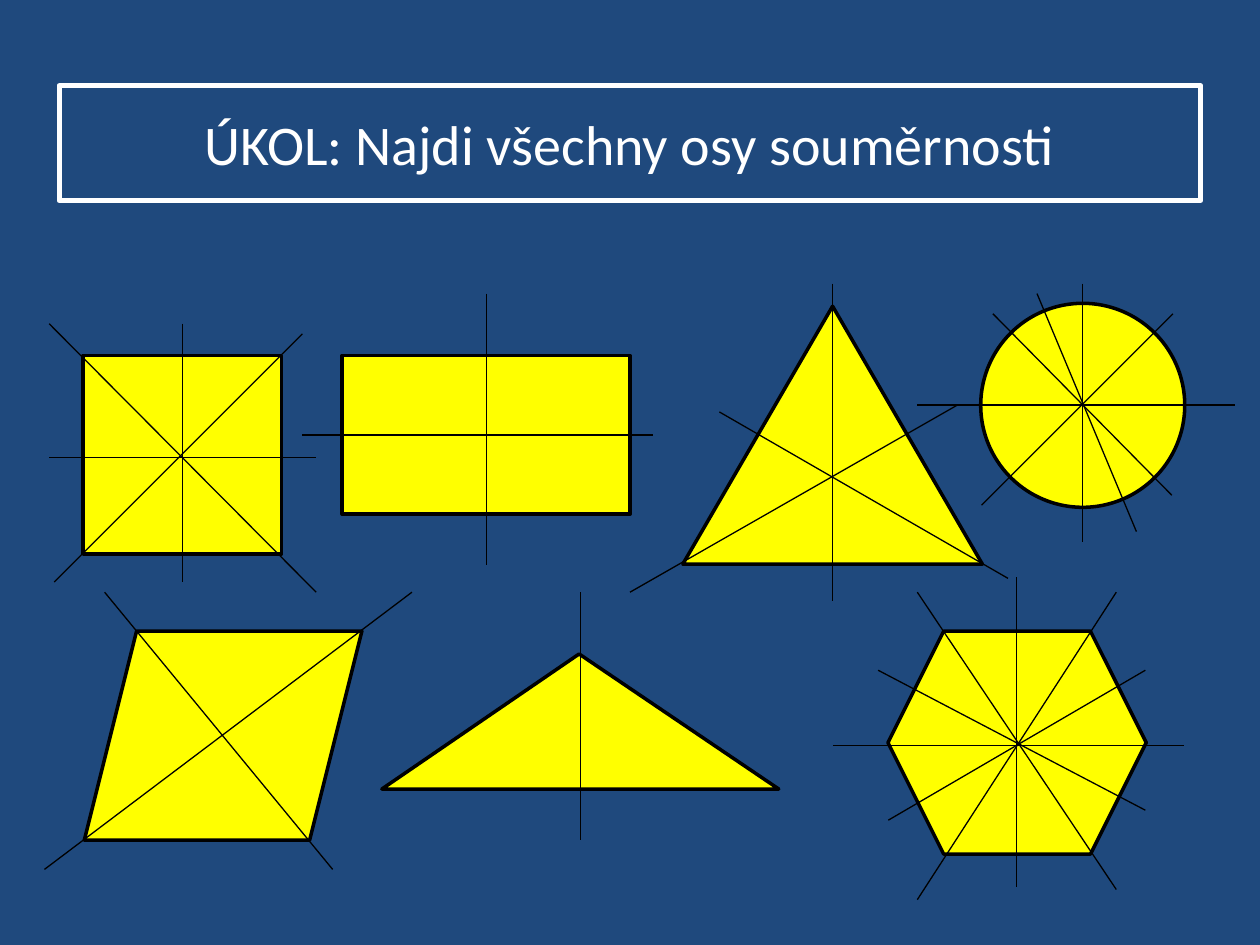
"""Build a slide of plane figures with their axes of symmetry."""
from lxml.etree import SubElement
from pptx import Presentation
from pptx.dml.color import RGBColor
from pptx.enum.shapes import MSO_CONNECTOR, MSO_SHAPE
from pptx.enum.text import MSO_ANCHOR, PP_ALIGN
from pptx.oxml.ns import qn
from pptx.util import Pt

HUES = {"back": "1F497D", "fill": "FFFF00", "ink": "000000", "text": "FFFFFF"}
FONT = "Calibri"
TITLE = "ÚKOL: Najdi všechny osy souměrnosti"
TITLE_BOX = (33.8, 49, 652.3, 65.5)

# kind, box (left, top, width, height), axes (x1, y1, x2, y2)
FIGURES = [
    (MSO_SHAPE.RECTANGLE, (47.4, 203.2, 113.4, 113.4), [
        (28.1, 185, 180.7, 338.4), (172.8, 190.8, 31, 332.6),
        (104.4, 185, 104.4, 332.6), (28.1, 261.4, 180.7, 261.4)]),
    (MSO_SHAPE.RECTANGLE, (195.6, 203.2, 164.4, 90.7), [
        (277.9, 167.8, 277.9, 322.6), (172.8, 248.6, 373, 248.6)]),
    (MSO_SHAPE.ISOSCELES_TRIANGLE, (390.2, 175, 171.2, 147.4), [
        (475.9, 162, 475.9, 343.4), (360, 338.4, 547.2, 231.4),
        (576, 330.5, 411.1, 235.4)]),
    (MSO_SHAPE.PARALLELOGRAM, (48.2, 360.7, 158.6, 119.4), [
        (59.8, 338.4, 190.1, 496.8), (235.4, 338.4, 25.4, 496.8)]),
    (MSO_SHAPE.OVAL, (560.4, 173.3, 116.6, 116.6), [
        (618.5, 162, 618.5, 309.6), (567.4, 179.3, 669.6, 283),
        (705.6, 231.4, 524.2, 231.4), (592.6, 167.8, 649.4, 303.8),
        (670.3, 179.3, 560.9, 288.7)]),
    (MSO_SHAPE.ISOSCELES_TRIANGLE, (218.2, 373.7, 226.8, 77.2), [
        (331.9, 338.4, 331.9, 480.2)]),
    (MSO_SHAPE.HEXAGON, (507.4, 360.7, 147.6, 127.4), [
        (524.2, 338.4, 637.9, 508.3), (637.9, 338.4, 524.2, 514.1),
        (475.9, 426.2, 676.8, 426.2), (581, 329.8, 581, 506.9),
        (654.5, 383, 507.6, 468.7), (501.8, 383, 654.5, 463)]),
]
SKEW = {5: 0.497}


def tint(name):
    return RGBColor.from_string(HUES[name])


def points(nums):
    return [Pt(n) for n in nums]


def stroke(item, name, width):
    item.line.color.rgb = tint(name)
    item.line.width = Pt(width)


def add_title(slide):
    title = slide.shapes.title
    title.left, title.top, title.width, title.height = points(TITLE_BOX)
    stroke(title, "text", 3)
    frame = title.text_frame
    frame.vertical_anchor = MSO_ANCHOR.MIDDLE
    para = frame.paragraphs[0]
    para.alignment = PP_ALIGN.CENTER
    run = para.add_run()
    run.text = TITLE
    run.font.name = FONT
    run.font.size = Pt(32)
    run.font.color.rgb = tint("text")


def add_figure(slide, kind, box, skew):
    shape = slide.shapes.add_shape(kind, *points(box))
    shape.shadow.inherit = False
    shape.fill.solid()
    shape.fill.fore_color.rgb = tint("fill")
    stroke(shape, "ink", 2)
    if skew:
        shape.adjustments[0] = skew


def add_axis(slide, ends):
    line = slide.shapes.add_connector(MSO_CONNECTOR.STRAIGHT, *points(ends))
    stroke(line, "ink", 0.75)
    SubElement(line._element.spPr, qn("a:effectLst"))


def main():
    deck = Presentation()
    deck.slide_width, deck.slide_height = Pt(720), Pt(540)
    slide = deck.slides.add_slide(deck.slide_layouts[5])
    slide.background.fill.solid()
    slide.background.fill.fore_color.rgb = tint("back")
    add_title(slide)
    for i, (kind, box, _) in enumerate(FIGURES):
        add_figure(slide, kind, box, SKEW.get(i))
    for _, _, axes in FIGURES:
        for ends in axes:
            add_axis(slide, ends)
    deck.save("out.pptx")


if __name__ == "__main__":
    main()
